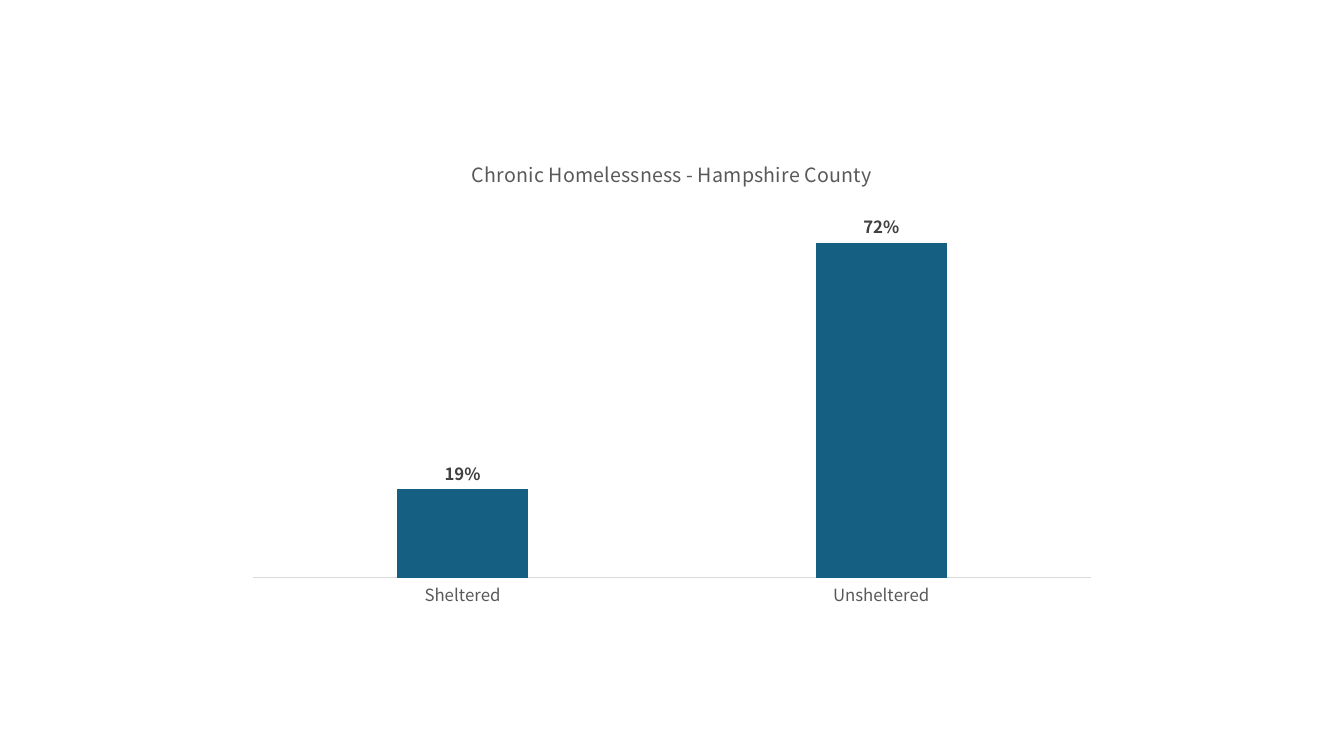
from dataclasses import dataclass

from lxml import etree
from pptx import Presentation
from pptx.chart.data import CategoryChartData
from pptx.dml.color import RGBColor
from pptx.enum.chart import XL_CHART_TYPE as ChartType
from pptx.enum.chart import XL_LABEL_POSITION as LabelPosition
from pptx.enum.chart import XL_TICK_MARK as TickMark
from pptx.oxml.ns import qn
from pptx.util import Inches, Pt


@dataclass(frozen=True)
class Theme:
    font: str = "Noto Sans CJK SC"
    chart_font: str = "Roboto"
    bar: RGBColor = RGBColor(0x15, 0x60, 0x82)
    text: RGBColor = RGBColor(0x59, 0x59, 0x59)
    label: RGBColor = RGBColor(0x40, 0x40, 0x40)
    axis: RGBColor = RGBColor(0xD9, 0xD9, 0xD9)
    title_size: Pt = Pt(14)
    text_size: Pt = Pt(12)
    base_size: Pt = Pt(10)


THEME = Theme()


def style_font(font, size, color, bold=False):
    font.name = THEME.font
    font.size = size
    font.color.rgb = color
    font.bold = bold


def place_plot(chart, **fractions):
    """Fix the inner plot area, in fractions of the chart frame."""
    plot_area = chart._chartSpace.chart.plotArea
    for old_layout in plot_area.findall(qn("c:layout")):
        plot_area.remove(old_layout)
    layout = etree.Element(qn("c:layout"))
    manual = etree.SubElement(layout, qn("c:manualLayout"))
    settings = {"layoutTarget": "inner", "xMode": "edge", "yMode": "edge", **fractions}
    for name, value in settings.items():
        etree.SubElement(manual, qn(f"c:{name}")).set("val", str(value))
    plot_area.insert(0, layout)


def style_title(chart, text):
    chart.has_title = True
    chart.chart_title.include_in_layout = False
    text_frame = chart.chart_title.text_frame
    text_frame.text = text
    style_font(text_frame.paragraphs[0].runs[0].font, THEME.title_size, THEME.text)


def style_axes(chart):
    category_axis = chart.category_axis
    category_axis.major_tick_mark = TickMark.NONE
    category_axis.minor_tick_mark = TickMark.NONE
    category_axis.format.line.color.rgb = THEME.axis
    category_axis.format.line.width = Pt(0.75)
    style_font(category_axis.tick_labels.font, THEME.text_size, THEME.text)

    value_axis = chart.value_axis
    value_axis.minimum_scale = 0
    value_axis.maximum_scale = 0.8
    value_axis.has_major_gridlines = False
    value_axis.visible = False


def style_bars(plot):
    plot.gap_width = 219
    plot.overlap = -27
    plot.vary_by_categories = False
    series = plot.series[0]
    series.format.fill.solid()
    series.format.fill.fore_color.rgb = THEME.bar
    labels = series.data_labels
    labels.show_value = True
    labels.number_format = "0%"
    labels.number_format_is_linked = False
    labels.position = LabelPosition.OUTSIDE_END
    style_font(labels.font, THEME.text_size, THEME.label, bold=True)


def add_column_chart(slide, title, values):
    data = CategoryChartData(number_format="0%")
    data.categories = list(values)
    data.add_series("Series 1", list(values.values()))
    chart = slide.shapes.add_chart(
        ChartType.COLUMN_CLUSTERED,
        Inches(2.34), Inches(1.38), Inches(8.65), Inches(4.73), data,
    ).chart
    chart.has_legend = False
    chart.font.name = THEME.chart_font
    chart.font.size = THEME.base_size
    style_title(chart, title)
    style_axes(chart)
    style_bars(chart.plots[0])
    place_plot(chart, x=0.02, y=0.14, w=0.96, h=0.78)


def main():
    presentation = Presentation()
    presentation.slide_width = Inches(13.33)
    presentation.slide_height = Inches(7.5)
    slide = presentation.slides.add_slide(presentation.slide_layouts[6])
    add_column_chart(
        slide,
        "Chronic Homelessness - Hampshire County",
        {"Sheltered": 0.19, "Unsheltered": 0.72},
    )
    presentation.save("out.pptx")


if __name__ == "__main__":
    main()
